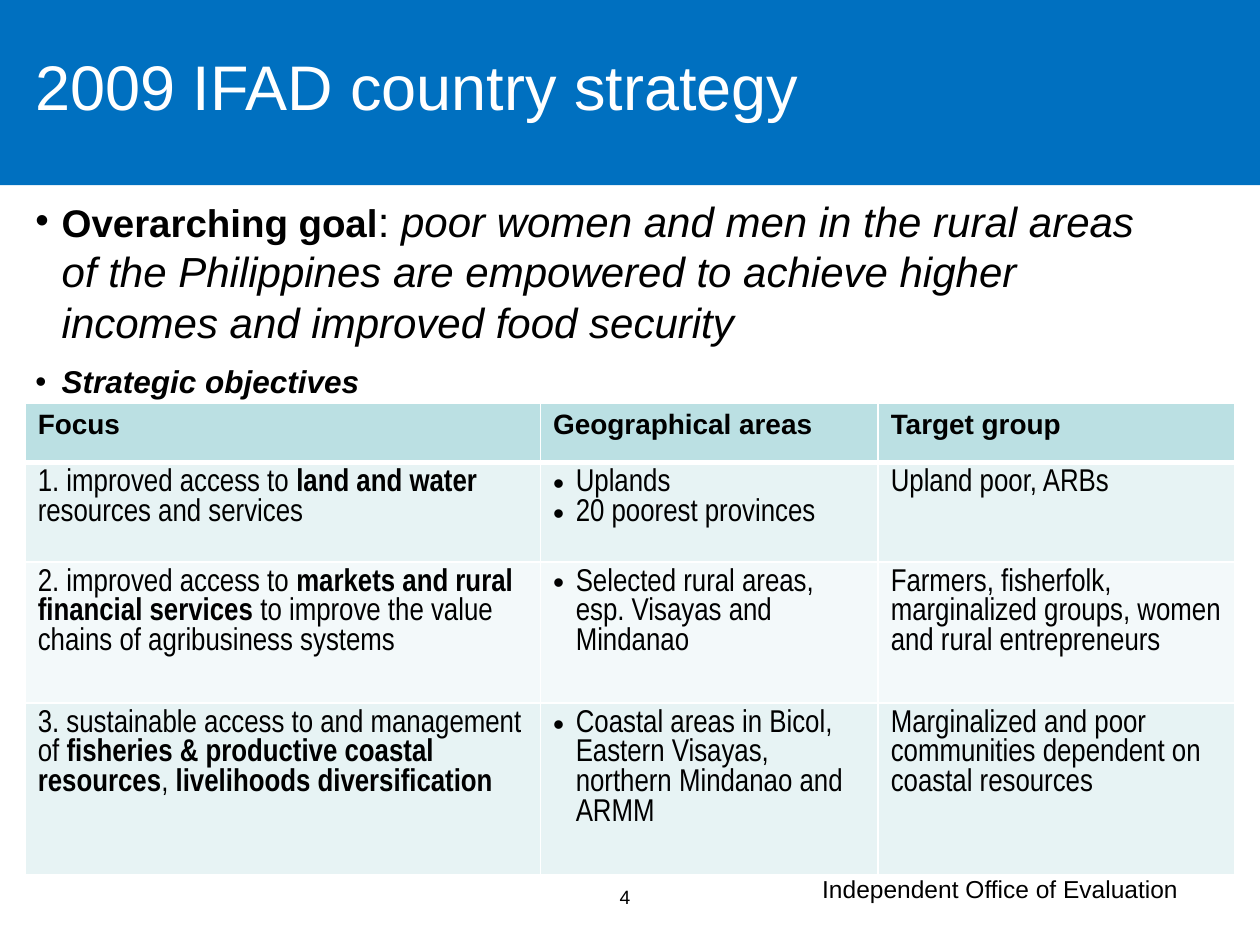
"""Build the country strategy slide with its table of objectives."""
import pptx
import pptx.util
import pptx.dml.color
import pptx.enum.shapes
import pptx.enum.text
import lxml.etree

Pt = pptx.util.Pt
Align = pptx.enum.text.PP_ALIGN
RGB = pptx.dml.color.RGBColor
BLUE = RGB(0x00, 0x70, 0xC0)
WHITE = RGB(0xFF, 0xFF, 0xFF)
BLACK = RGB(0x00, 0x00, 0x00)
TEAL = RGB(0xBB, 0xE0, 0xE3)
MINT = RGB(0xE7, 0xF3, 0xF4)
PALE = RGB(0xF3, 0xF9, 0xFA)
NS = "{http://schemas.openxmlformats.org/drawingml/2006/main}"

deck = pptx.Presentation()
deck.slide_width = pptx.util.Inches(10)
deck.slide_height = pptx.util.Inches(7.5)
wide, high = deck.slide_width, deck.slide_height
slide = deck.slides.add_slide(deck.slide_layouts[6])


def write(para, runs, base, tint=BLACK, dent=0):
    """Add runs to a paragraph, with a bullet where an indent is given."""
    if dent:
        props = para._p.get_or_add_pPr()
        props.set("marL", str(int(dent * wide)))
        props.set("indent", str(-int(dent * wide)))
        lxml.etree.SubElement(props, NS + "buFont", typeface="Arial")
        lxml.etree.SubElement(props, NS + "buChar", char="•")
    for words, extra in runs:
        run = para.add_run()
        run.text = words
        for key, val in {**base, **extra}.items():
            setattr(run.font, key, val)
        run.font.color.rgb = tint


def box(left, top, width, height, **form):
    """Add a text box placed by shares of the slide and give its frame."""
    shape = slide.shapes.add_textbox(int(left * wide), int(top * high),
                                     int(width * wide), int(height * high))
    for key, val in form.items():
        setattr(shape.text_frame, key, val)
    return shape.text_frame


band = slide.shapes.add_shape(pptx.enum.shapes.MSO_SHAPE.RECTANGLE,
                              0, 0, wide, int(0.196 * high))
band.shadow.inherit = False
band.fill.solid()
band.fill.fore_color.rgb = BLUE
band.line.fill.background()

flat = dict.fromkeys(("margin_left", "margin_right", "margin_top", "margin_bottom"), 0)
foot = box(0.641, 0.9187, 0.304, 0.0453, word_wrap=False).paragraphs[0]
foot.alignment = Align.RIGHT
write(foot, [("Independent Office of Evaluation", {})], {"name": "Arial", "size": Pt(14)})

goals = [
    ([("Overarching goal", {"size": Pt(22), "bold": True}),
      (": ", {}),
      ("poor women and men in the rural areas of the Philippines are empowered "
       "to achieve higher incomes and improved food security", {"italic": True})], 9),
    ([("Strategic objectives", {"size": Pt(18), "bold": True, "italic": True})], 12),
]
body = box(0.028, 0.2067, 0.882, 0.6493, word_wrap=True, **flat)
for num, (runs, gap) in enumerate(goals):
    para = body.add_paragraph() if num else body.paragraphs[0]
    write(para, runs, {"name": "Arial", "size": Pt(24)}, dent=0.021)
    para.space_after = Pt(gap)

title = box(0.028, 0.028, 0.953, 0.1253, word_wrap=True,
            vertical_anchor=pptx.enum.text.MSO_ANCHOR.MIDDLE, **flat)
write(title.paragraphs[0], [("2009 IFAD country strategy", {})],
      {"name": "Arial", "size": Pt(36)}, WHITE)

rows = [
    (["Focus"], ["Geographical areas"], ["Target group"]),
    (["1. improved access to *land and water *resources and services"],
     ["Uplands", "20 poorest provinces"],
     ["Upland poor, ARBs"]),
    (["2. improved access to *markets and rural financial services* to improve "
      "the value chains of agribusiness systems"],
     ["Selected rural areas, esp. Visayas and Mindanao"],
     ["Farmers, fisherfolk, marginalized groups, women and rural entrepreneurs"]),
    (["3. sustainable access to and management of *fisheries & productive coastal "
      "resources*, *livelihoods diversification"],
     ["Coastal areas in Bicol, Eastern Visayas, northern Mindanao and ARMM"],
     ["Marginalized and poor communities dependent on coastal resources"]),
]
grid = slide.shapes.add_table(4, 3, int(0.02 * wide), int(0.4267 * high),
                              int(0.961 * wide), int(0.5 * high)).table
for col, part in zip(grid.columns, (0.409, 0.268, 0.283)):
    col.width = int(part * wide)
for row, part in zip(grid.rows, (0.0627, 0.1053, 0.1493, 0.1813)):
    row.height = int(part * high)

for r, row in enumerate(rows):
    head = r == 0
    look = {"name": "Arial" if head else "Arial Narrow", "size": Pt(16 if head else 18)}
    for c, lines in enumerate(row):
        cell = grid.cell(r, c)
        props = cell._tc.get_or_add_tcPr()
        for side in "LRTB":
            thick = 3 if (r, side) in ((0, "B"), (1, "T")) else 1
            edge = lxml.etree.SubElement(props, NS + "ln" + side, w=str(Pt(thick)))
            paint = lxml.etree.SubElement(edge, NS + "solidFill")
            lxml.etree.SubElement(paint, NS + "srgbClr", val=str(WHITE))
        cell.fill.solid()
        cell.fill.fore_color.rgb = TEAL if head else (PALE, MINT)[r % 2]
        for num, line in enumerate(lines):
            frame = cell.text_frame
            para = frame.add_paragraph() if num else frame.paragraphs[0]
            runs = [(words, {"bold": head or k % 2 == 1})
                    for k, words in enumerate(line.split("*"))]
            write(para, runs, look, dent=0.018 if c == 1 and not head else 0)

page = box(0.482, 0.9307, 0.031, 0.0387, word_wrap=True)
write(page.paragraphs[0], [("4", {})], {"name": "Arial", "size": Pt(11)})

deck.save("out.pptx")
